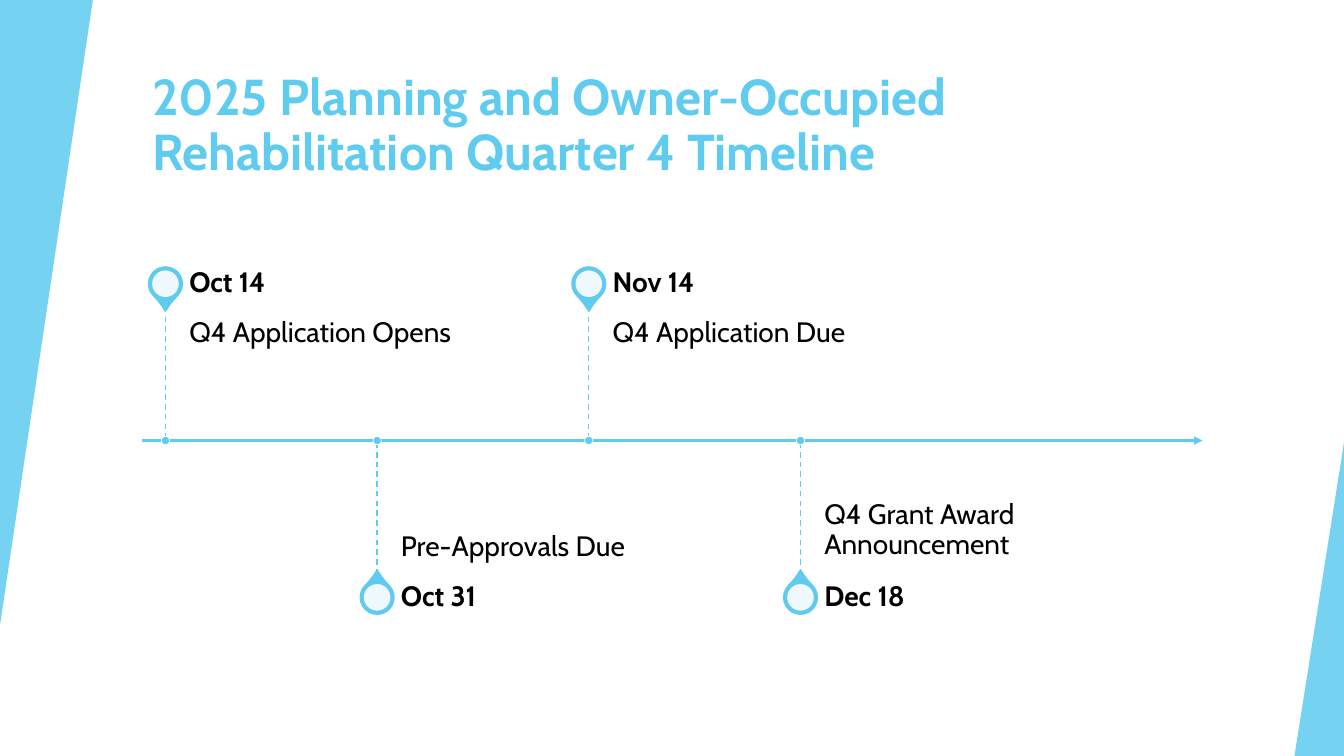
"""Build the Quarter 4 grant timeline slide."""
from dataclasses import dataclass
from typing import Any, NamedTuple

from lxml import etree
from pptx import Presentation
from pptx import util as u
from pptx.dml.color import RGBColor
from pptx.enum import dml, shapes, text
from pptx.oxml import ns


@dataclass(frozen=True)
class Theme:
    font: str = "Cabin"
    accent: str = "5FCBEF"
    white: str = "FFFFFF"
    ink: str = "000000"
    title_size: float = 36
    body_size: float = 20
    line_spacing: float = 0.9


class Milestone(NamedTuple):
    date: str
    event: str
    above: bool


class Wedge(NamedTuple):
    left: float
    top: float
    width: float
    height: float
    turn: float


THEME = Theme()
PAGE_WIDTH, PAGE_HEIGHT = 960, 540
AXIS_LEFT, AXIS_RIGHT, AXIS_Y = 101.5, 859, 314.7
FIRST_STOP, STOP_GAP = 118.2, 151.2
PIN_RISE, STEM = 112, 95.5
PIN, CORE, DOT = 23.6, 19, 5.9
LABEL_GAP, LABEL_WIDTH, DATE_HEIGHT = 17, 252, 33.6

WEDGES = [
    Wedge(0, 0, 66.3, 446.5, 180),
    Wedge(924.6, 316, 35.4, 224, 0),
]
MILESTONES = [
    Milestone("Oct 14", "Q4 Application Opens", True),
    Milestone("Oct 31", "Pre-Approvals Due", False),
    Milestone("Nov 14", "Q4 Application Due", True),
    Milestone("Dec 18", "Q4 Grant Award Announcement", False),
]


def add_figure(page: Any, kind: shapes.MSO_SHAPE, left: float, top: float, width: float,
               height: float, color: str, *, opacity: int = 100, outline: str = "",
               weight: float = 0, turn: float = 0, adjust: float | None = None) -> None:
    """Draw a filled preset shape."""
    figure = page.shapes.add_shape(kind, u.Pt(left), u.Pt(top), u.Pt(width), u.Pt(height))
    figure.shadow.inherit = False
    figure.rotation = turn
    if adjust is not None:
        figure.adjustments[0] = adjust
    figure.fill.solid()
    figure.fill.fore_color.rgb = RGBColor.from_string(color)
    if opacity < 100:
        paint = figure.element.spPr.find(ns.qn("a:solidFill"))[0]
        etree.SubElement(paint, ns.qn("a:alpha"), val=str(opacity * 1000))
    if outline:
        figure.line.color.rgb = RGBColor.from_string(outline)
        figure.line.width = u.Pt(weight)
    else:
        figure.line.fill.background()


def add_centered(page: Any, kind: shapes.MSO_SHAPE, x: float, y: float, size: float,
                 color: str, **style: Any) -> None:
    """Draw a square preset shape around a centre point."""
    add_figure(page, kind, x - size / 2, y - size / 2, size, size, color, **style)


def add_line(page: Any, start: tuple[float, float], end: tuple[float, float], weight: float,
             *, dashed: bool = False, arrow: bool = False) -> None:
    """Draw a straight accent line."""
    line = page.shapes.add_connector(
        shapes.MSO_CONNECTOR.STRAIGHT, *(u.Pt(value) for value in start + end))
    line.line.color.rgb = RGBColor.from_string(THEME.accent)
    line.line.width = u.Pt(weight)
    if dashed:
        line.line.dash_style = dml.MSO_LINE.DASH
    if arrow:
        etree.SubElement(line.line._get_or_add_ln(), ns.qn("a:tailEnd"), type="triangle")
    etree.SubElement(line.element.spPr, ns.qn("a:effectLst"))


def add_text(page: Any, words: str, left: float, top: float, width: float, height: float, *,
             size: float = THEME.body_size, color: str = THEME.ink, bold: bool = False,
             anchor: text.MSO_ANCHOR = text.MSO_ANCHOR.TOP,
             insets: tuple[float, float, float, float] = (0, 0, 10, 0)) -> None:
    """Place one formatted paragraph, with insets as left, top, right, bottom."""
    box = page.shapes.add_textbox(u.Pt(left), u.Pt(top), u.Pt(width), u.Pt(height))
    frame = box.text_frame
    frame.word_wrap = True
    frame.vertical_anchor = anchor
    frame.margin_left, frame.margin_top, frame.margin_right, frame.margin_bottom = map(u.Pt, insets)
    para = frame.paragraphs[0]
    para.line_spacing = THEME.line_spacing
    span = para.add_run()
    span.text = words
    span.font.name = THEME.font
    span.font.size = u.Pt(size)
    span.font.bold = bold
    span.font.color.rgb = RGBColor.from_string(color)


def add_milestone(page: Any, stop: Milestone, x: float) -> None:
    """Draw a pin, its stem, its axis dot and its two labels."""
    side = -1 if stop.above else 1
    pin_y = AXIS_Y + side * PIN_RISE
    stem_y = AXIS_Y + side * STEM
    label_left = x + LABEL_GAP
    add_centered(page, shapes.MSO_SHAPE.TEAR, x, pin_y, PIN, THEME.accent,
                 outline=THEME.accent, weight=1.5, turn=135 if stop.above else 315, adjust=1.15)
    add_centered(page, shapes.MSO_SHAPE.OVAL, x, pin_y, CORE, THEME.white, opacity=90)
    add_text(page, stop.event, label_left, min(stem_y, AXIS_Y), LABEL_WIDTH, STEM,
             anchor=text.MSO_ANCHOR.TOP if stop.above else text.MSO_ANCHOR.BOTTOM,
             insets=(0, 10, 10, 15) if stop.above else (0, 15, 0, 10))
    add_text(page, stop.date, label_left, pin_y - DATE_HEIGHT / 2, LABEL_WIDTH, DATE_HEIGHT,
             bold=True, anchor=text.MSO_ANCHOR.MIDDLE)
    add_line(page, (x, stem_y), (x, AXIS_Y), 1, dashed=True)
    add_centered(page, shapes.MSO_SHAPE.OVAL, x, AXIS_Y, DOT, THEME.accent,
                 outline=THEME.white, weight=0.5)


def main() -> None:
    """Assemble and save the slide."""
    deck = Presentation()
    deck.slide_width, deck.slide_height = u.Pt(PAGE_WIDTH), u.Pt(PAGE_HEIGHT)
    page = deck.slides.add_slide(deck.slide_layouts[6])
    add_text(page, "2025 Planning and Owner-Occupied Rehabilitation Quarter 4 Timeline",
             AXIS_LEFT, 48.2, 802.8, 86.4, size=THEME.title_size, color=THEME.accent,
             bold=True, insets=(7.2, 3.6, 7.2, 3.6))
    for wedge in WEDGES:
        add_figure(page, shapes.MSO_SHAPE.ISOSCELES_TRIANGLE, wedge.left, wedge.top, wedge.width,
                   wedge.height, THEME.accent, opacity=85, turn=wedge.turn, adjust=1)
    add_line(page, (AXIS_LEFT, AXIS_Y), (AXIS_RIGHT, AXIS_Y), 1.5, arrow=True)
    for index, stop in enumerate(MILESTONES):
        add_milestone(page, stop, FIRST_STOP + index * STOP_GAP)
    deck.save("out.pptx")


if __name__ == "__main__":
    main()
